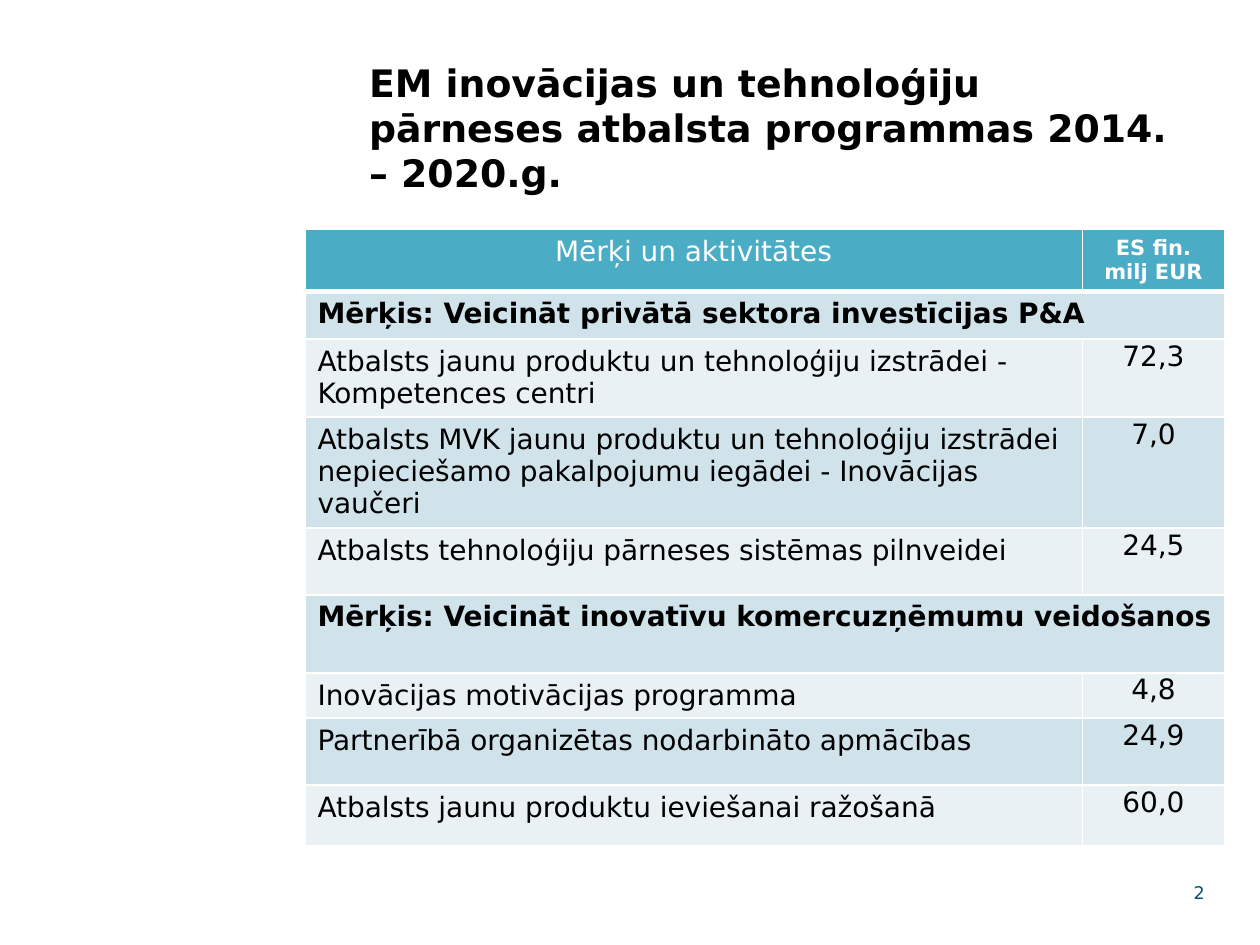
from lxml.etree import SubElement
from pptx import Presentation
from pptx.dml.color import RGBColor
from pptx.enum.text import MSO_ANCHOR as Anchor, MSO_AUTO_SIZE as AutoSize, PP_ALIGN as Align
from pptx.oxml import parse_xml
from pptx.oxml.ns import nsdecls
from pptx.util import Inches, Pt

HEADER, GOAL, ACTIVITY = "4BACC6", "D0E3EA", "E9F1F5"
COLUMNS = [6.17, 1.13]
ROWS = [
    (0.49, "Mērķi un aktivitātes", "ES fin. milj EUR"),
    (0.38, "Mērķis: Veicināt privātā sektora investīcijas P&A", None),
    (0.62, "Atbalsts jaunu produktu un tehnoloģiju izstrādei - Kompetences centri", "72,3"),
    (0.88, "Atbalsts MVK jaunu produktu un tehnoloģiju izstrādei nepieciešamo "
           "pakalpojumu iegādei - Inovācijas vaučeri", "7,0"),
    (0.53, "Atbalsts tehnoloģiju pārneses sistēmas pilnveidei", "24,5"),
    (0.62, "Mērķis: Veicināt inovatīvu komercuzņēmumu veidošanos", None),
    (0.36, "Inovācijas motivācijas programma", "4,8"),
    (0.53, "Partnerībā organizētas nodarbināto apmācības", "24,9"),
    (0.48, "Atbalsts jaunu produktu ieviešanai ražošanā", "60,0"),
]


def write(frame, text, size=16, color="000000", bold=False, align=Align.LEFT):
    para = frame.paragraphs[0]
    para.alignment = align
    span = para.add_run()
    span.text = text
    span.font.name = "DejaVu Sans"
    span.font.size = Pt(size)
    span.font.bold = bold
    span.font.color.rgb = RGBColor.from_string(color)


def paint(cell, fill, top=1, bottom=1):
    """Fill a cell and give it white borders, with widths in points."""
    cell.fill.solid()
    cell.fill.fore_color.rgb = RGBColor.from_string(fill)
    props = cell._tc.get_or_add_tcPr()
    for place, (side, width) in enumerate(zip("LRTB", (1, 1, top, bottom))):
        props.insert(place, parse_xml(
            f'<a:ln{side} {nsdecls("a")} w="{Pt(width)}"><a:solidFill>'
            f'<a:srgbClr val="FFFFFF"/></a:solidFill></a:ln{side}>'))


deck = Presentation()
deck.slide_width, deck.slide_height = Inches(10), Inches(7.5)
page = deck.slides.add_slide(deck.slide_layouts[5])

title = page.shapes.title
title.left, title.top = Inches(2.83), Inches(0.42)
title.width, title.height = Inches(6.67), Inches(1.13)
title.text_frame.word_wrap = True
title.text_frame.auto_size = AutoSize.NONE
title.text_frame.vertical_anchor = Anchor.TOP
write(title.text_frame, "EM inovācijas un tehnoloģiju pārneses atbalsta programmas 2014. – 2020.g.",
      size=21.6, bold=True)

table = page.shapes.add_table(
    len(ROWS), len(COLUMNS), Inches(2.42), Inches(1.82),
    Inches(sum(COLUMNS)), Inches(sum(row[0] for row in ROWS))).table
for column, width in zip(table.columns, COLUMNS):
    column.width = Inches(width)

for index, (height, activity, funding) in enumerate(ROWS):
    table.rows[index].height = Inches(height)
    label, amount = table.cell(index, 0), table.cell(index, 1)
    is_header, is_goal = index == 0, funding is None
    fill = HEADER if is_header else GOAL if index % 2 else ACTIVITY
    for cell in (label, amount):
        paint(cell, fill, top=3 if index == 1 else 1, bottom=3 if is_header else 1)

    if is_header:
        write(label.text_frame, activity, color="FFFFFF", align=Align.CENTER)
        write(amount.text_frame, funding, size=12, color="FFFFFF", bold=True, align=Align.CENTER)
        continue
    write(label.text_frame, activity, bold=is_goal)
    if is_goal:
        label.merge(amount)
    else:
        amount.margin_left = amount.margin_right = amount.margin_top = Inches(0.01)
        amount.margin_bottom = 0
        write(amount.text_frame, funding, align=Align.CENTER)

number = page.shapes.add_textbox(Inches(9.33), Inches(6.92), Inches(0.33), Inches(0.33))
number.text_frame.word_wrap = True
number.text_frame.vertical_anchor = Anchor.MIDDLE
write(number.text_frame, "2", size=10, color="005374", align=Align.RIGHT)

deck.save("out.pptx")
